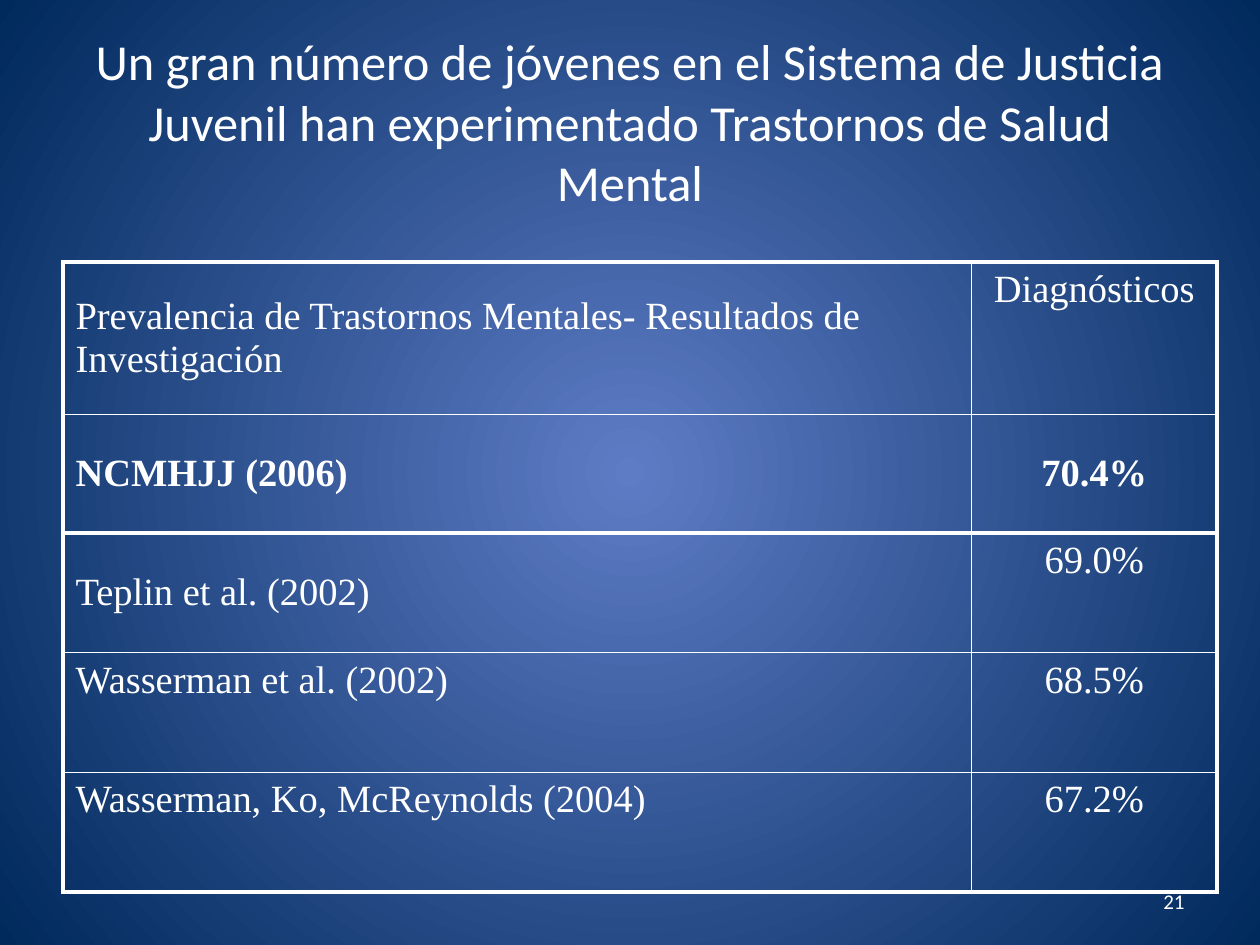
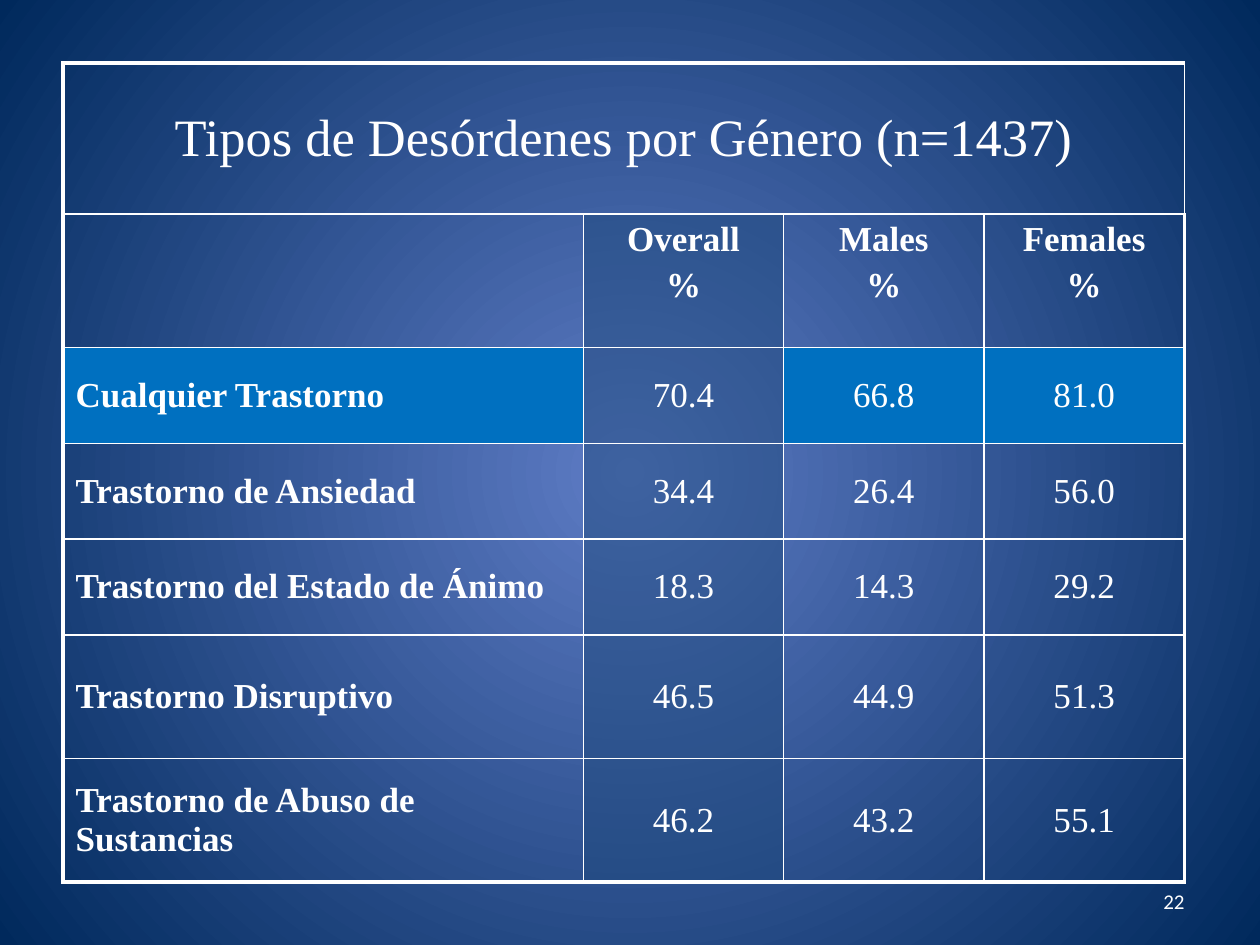
from lxml import etree
from pptx import Presentation
from pptx.dml.color import RGBColor
from pptx.enum import text
from pptx.oxml import parse_xml
from pptx.oxml.ns import nsdecls, qn
from pptx.util import Inches, Pt

COLORS = {
    "center": "5E7CC5",
    "edge": "00295C",
    "white": "FFFFFF",
    "highlight": "0070C0",
    "overall": "1F497D",
}
SANS, SERIF = "Calibri", "Times New Roman"
OUTER, INNER, HEAVY = 2.25, 1, 3
LEFT, CENTER, RIGHT = text.PP_ALIGN.LEFT, text.PP_ALIGN.CENTER, text.PP_ALIGN.RIGHT
TOP, MIDDLE = text.MSO_ANCHOR.TOP, text.MSO_ANCHOR.MIDDLE


class Deck:
    """Shared style and the current slide."""

    def __init__(self):
        self.prs = Presentation()
        self.prs.slide_width, self.prs.slide_height = Inches(10), Inches(7.5)
        self.s = None
        self.background()

    def background(self):
        """Radial gradient on the master, inherited by every slide."""
        stops = "".join(
            f'<a:gs pos="{pos}"><a:srgbClr val="{COLORS[name]}"/></a:gs>'
            for pos, name in ((0, "center"), (100000, "edge")))
        c_sld = self.prs.slide_master.element.find(qn("p:cSld"))
        old = c_sld.find(qn("p:bg"))
        if old is not None:
            c_sld.remove(old)
        c_sld.insert(0, parse_xml(
            f'<p:bg {nsdecls("p", "a")}><p:bgPr><a:gradFill rotWithShape="1">'
            f'<a:gsLst>{stops}</a:gsLst><a:path path="circle">'
            '<a:fillToRect l="50000" t="50000" r="50000" b="50000"/></a:path>'
            '</a:gradFill><a:effectLst/></p:bgPr></p:bg>'))

    def slide(self, number, layout):
        self.s = self.prs.slides.add_slide(self.prs.slide_layouts[layout])
        sp = self.s.shapes.add_textbox(Inches(7.17), Inches(6.95), Inches(2.33), Inches(0.4))
        self.set_text(sp.text_frame, str(number), 12, SANS, RIGHT)

    def set_text(self, tf, content, size, font, align, bold=False, before=0):
        tf.text = content
        tf.word_wrap = True
        tf.vertical_anchor = MIDDLE
        for p in tf.paragraphs:
            p.alignment = align
            p.space_before = Pt(before)
            for r in p.runs:
                r.font.size, r.font.name, r.font.bold = Pt(size), font, bold
                r.font.color.rgb = RGBColor.from_string(COLORS["white"])

    def title(self, content):
        sp = self.s.shapes.title
        sp.left, sp.top, sp.width, sp.height = map(Inches, (0.5, 0.42, 9, 1.08))
        self.set_text(sp.text_frame, content, 28.8, SANS, CENTER)
        sp.text_frame.auto_size = text.MSO_AUTO_SIZE.NONE

    def table(self, top, col_widths, row_heights, heavy_after=None):
        """Transparent ruled table; heavy_after is the row above a thick rule."""
        n_rows, n_cols = len(row_heights), len(col_widths)
        frame = self.s.shapes.add_table(
            n_rows, n_cols, Inches(0.5), Inches(top),
            Inches(sum(col_widths)), Inches(sum(row_heights)))
        table = frame.table
        table.first_row = table.horz_banding = False
        for col, width in zip(table.columns, col_widths):
            col.width = Inches(width)
        for row, height in zip(table.rows, row_heights):
            row.height = Inches(height)
        # Rule i lies above row i (or left of column i)
        across = [OUTER] + [INNER] * (n_rows - 1) + [OUTER]
        down = [OUTER] + [INNER] * (n_cols - 1) + [OUTER]
        if heavy_after is not None:
            across[heavy_after + 1] = HEAVY
        for i in range(n_rows):
            for j in range(n_cols):
                cell = table.cell(i, j)
                cell.fill.background()
                self.borders(cell, L=down[j], R=down[j + 1], T=across[i], B=across[i + 1])
        return table

    def borders(self, cell, **widths):
        tc_pr = cell._tc.get_or_add_tcPr()
        for i, (side, width) in enumerate(widths.items()):
            tc_pr.insert(i, parse_xml(
                f'<a:ln{side} {nsdecls("a")} w="{Pt(width)}"><a:solidFill>'
                f'<a:srgbClr val="{COLORS["white"]}"/></a:solidFill></a:ln{side}>'))

    def cell(self, cell, content, size, align=CENTER, bold=False, anchor=MIDDLE):
        self.set_text(cell.text_frame, content, size, SERIF, align, bold, before=size * 0.2)
        cell.vertical_anchor = anchor

    def fill(self, cell, color, alpha=None):
        cell.fill.solid()
        cell.fill.fore_color.rgb = RGBColor.from_string(COLORS[color])
        if alpha is not None:
            clr = cell._tc.tcPr.find(qn("a:solidFill")).find(qn("a:srgbClr"))
            etree.SubElement(clr, qn("a:alpha")).set("val", str(alpha * 1000))


def prevalence_slide(deck):
    deck.slide(21, layout=5)
    deck.title("Un gran número de jóvenes en el Sistema de Justicia Juvenil "
               "han experimentado Trastornos de Salud Mental")
    # Study, rate, bold, anchor of each cell
    studies = [
        ("Prevalencia de Trastornos Mentales- Resultados de Investigación",
         "Diagnósticos", False, MIDDLE, TOP),
        ("NCMHJJ (2006)", "70.4%", True, MIDDLE, MIDDLE),
        ("Teplin et al. (2002)", "69.0%", False, MIDDLE, TOP),
        ("Wasserman et al. (2002)", "68.5%", False, TOP, TOP),
        ("Wasserman, Ko, McReynolds (2004)", "67.2%", False, TOP, TOP),
    ]
    table = deck.table(2.08, [7.21, 1.95], [1.21, 0.94] + [0.95] * 3, heavy_after=1)
    for i, (study, rate, bold, study_anchor, rate_anchor) in enumerate(studies):
        deck.cell(table.cell(i, 0), study, 22, LEFT, bold, study_anchor)
        deck.cell(table.cell(i, 1), rate, 22, CENTER, bold, rate_anchor)


def gender_slide(deck):
    deck.slide(22, layout=6)
    disorders = [
        ("Cualquier Trastorno", "70.4", "66.8", "81.0"),
        ("Trastorno de Ansiedad", "34.4", "26.4", "56.0"),
        ("Trastorno del Estado de Ánimo", "18.3", "14.3", "29.2"),
        ("Trastorno Disruptivo", "46.5", "44.9", "51.3"),
        ("Trastorno de Abuso de Sustancias", "46.2", "43.2", "55.1"),
    ]
    table = deck.table(0.5, [4.13] + [1.59] * 3, [1.2, 1.06] + [0.76] * 3 + [0.98] * 2)

    # Heading across all columns, then column heads
    table.cell(0, 0).merge(table.cell(0, 3))
    deck.cell(table.cell(0, 0), "Tipos de Desórdenes por Género (n=1437)", 30)
    for j, group in enumerate(("Overall", "Males", "Females"), start=1):
        deck.cell(table.cell(1, j), f"{group}\n%", 20, bold=True, anchor=TOP)

    # Disorder names and rates
    for i, (disorder, *rates) in enumerate(disorders, start=2):
        deck.cell(table.cell(i, 0), disorder, 20, LEFT, bold=True)
        for j, rate in enumerate(rates, start=1):
            deck.cell(table.cell(i, j), rate, 20)

    # Highlighted row and shaded overall column
    for j in (0, 2, 3):
        deck.fill(table.cell(2, j), "highlight")
    for i in range(1, len(table.rows)):
        deck.fill(table.cell(i, 1), "overall", alpha=50)


def main():
    deck = Deck()
    prevalence_slide(deck)
    gender_slide(deck)
    deck.prs.save("out.pptx")


if __name__ == "__main__":
    main()
